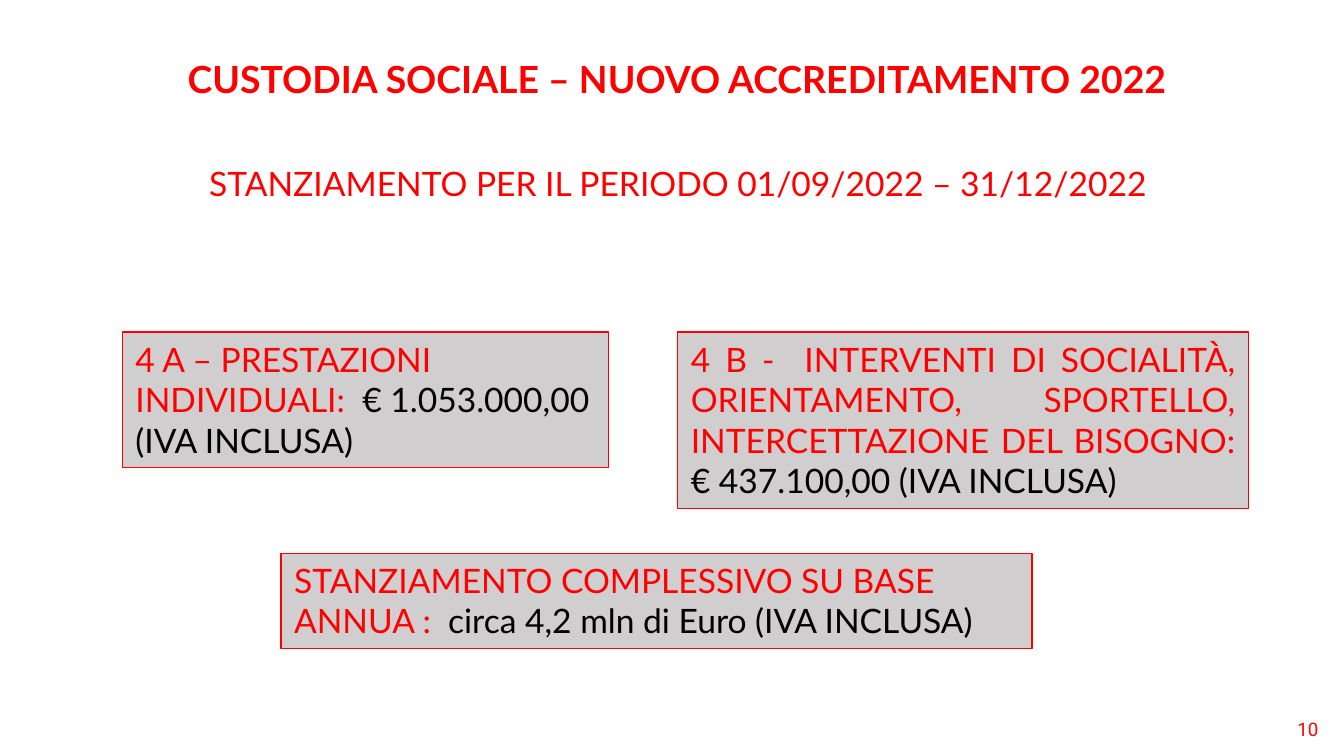
from pptx import Presentation
from pptx.dml.color import RGBColor
from pptx.enum.shapes import MSO_SHAPE
from pptx.enum.text import MSO_ANCHOR, PP_ALIGN
from pptx.util import Pt

LEFT, CENTER, JUSTIFY = PP_ALIGN.LEFT, PP_ALIGN.CENTER, PP_ALIGN.JUSTIFY
RED, BLACK, GREY = "FF0000", "000000", "D0CECE"

TITLE = "CUSTODIA SOCIALE – NUOVO ACCREDITAMENTO 2022"
PERIOD = "STANZIAMENTO PER IL PERIODO 01/09/2022 – 31/12/2022"
PAGE_NUMBER = "10"
TITLE_AREA = (36.5, 26.5, 652.5, 39.5)
PERIOD_AREA = (105, 83.5, 556, 51)
PAGE_AREA = (680.5, 381, 38, 19.5)
ALLOCATIONS = [
    ((65.5, 178, 260.5, 72.5), LEFT,
     [[("4 A – PRESTAZIONI INDIVIDUALI:  ", RED),
       ("€ 1.053.000,00 (IVA INCLUSA)", BLACK)]]),
    ((363, 178, 306, 94.5), JUSTIFY,
     [[("4 B -  INTERVENTI DI SOCIALITÀ, ORIENTAMENTO, SPORTELLO, "
        "INTERCETTAZIONE DEL BISOGNO: ", RED)],
      [("€ 437.100,00 (IVA INCLUSA)", BLACK)]]),
    ((150.5, 296.5, 402.5, 51), LEFT,
     [[("STANZIAMENTO COMPLESSIVO SU BASE ANNUA :  ", RED),
       ("circa 4,2 mln di Euro (IVA INCLUSA)", BLACK)]]),
]


def color(hex_code):
    """Turn a hex string into a colour."""
    return RGBColor.from_string(hex_code)


def points(area):
    """Convert an area to lengths in points."""
    return [Pt(length) for length in area]


def write(shape, paragraphs, size=18, font="Lato", bold=False, align=LEFT, inset=7.2):
    """Fill a shape with paragraphs of coloured runs."""
    frame = shape.text_frame
    frame.word_wrap = True
    frame.vertical_anchor = MSO_ANCHOR.TOP
    frame.margin_left, frame.margin_right = Pt(inset), Pt(7.2)
    frame.margin_top = frame.margin_bottom = Pt(3.6)
    for index, runs in enumerate(paragraphs):
        paragraph = frame.add_paragraph() if index else frame.paragraphs[0]
        paragraph.alignment = align
        paragraph.line_spacing = 1.0
        paragraph.space_before = Pt(0)
        for text, ink in runs:
            run = paragraph.add_run()
            run.text = text
            run.font.name, run.font.size, run.font.bold = font, Pt(size), bold
            run.font.color.rgb = color(ink)


def main():
    """Build the allocation slide."""
    deck = Presentation()
    deck.slide_width, deck.slide_height = Pt(720), Pt(405)
    slide = deck.slides.add_slide(deck.slide_layouts[5])
    shapes = slide.shapes

    title = shapes.title
    title.left, title.top, title.width, title.height = points(TITLE_AREA)
    write(title, [[(TITLE, RED)]], size=20, bold=True, align=CENTER)

    period = shapes.add_textbox(*points(PERIOD_AREA))
    write(period, [[(PERIOD, RED)]])

    for area, align, paragraphs in ALLOCATIONS:
        allocation = shapes.add_shape(MSO_SHAPE.RECTANGLE, *points(area))
        allocation.shadow.inherit = False
        allocation.fill.solid()
        allocation.fill.fore_color.rgb = color(GREY)
        allocation.line.color.rgb = color(RED)
        allocation.line.width = Pt(0.75)
        write(allocation, paragraphs, align=align)

    page_number = shapes.add_textbox(*points(PAGE_AREA))
    write(page_number, [[(PAGE_NUMBER, RED)]], size=10, font="Roboto", inset=14.5)

    deck.save("out.pptx")


if __name__ == "__main__":
    main()
